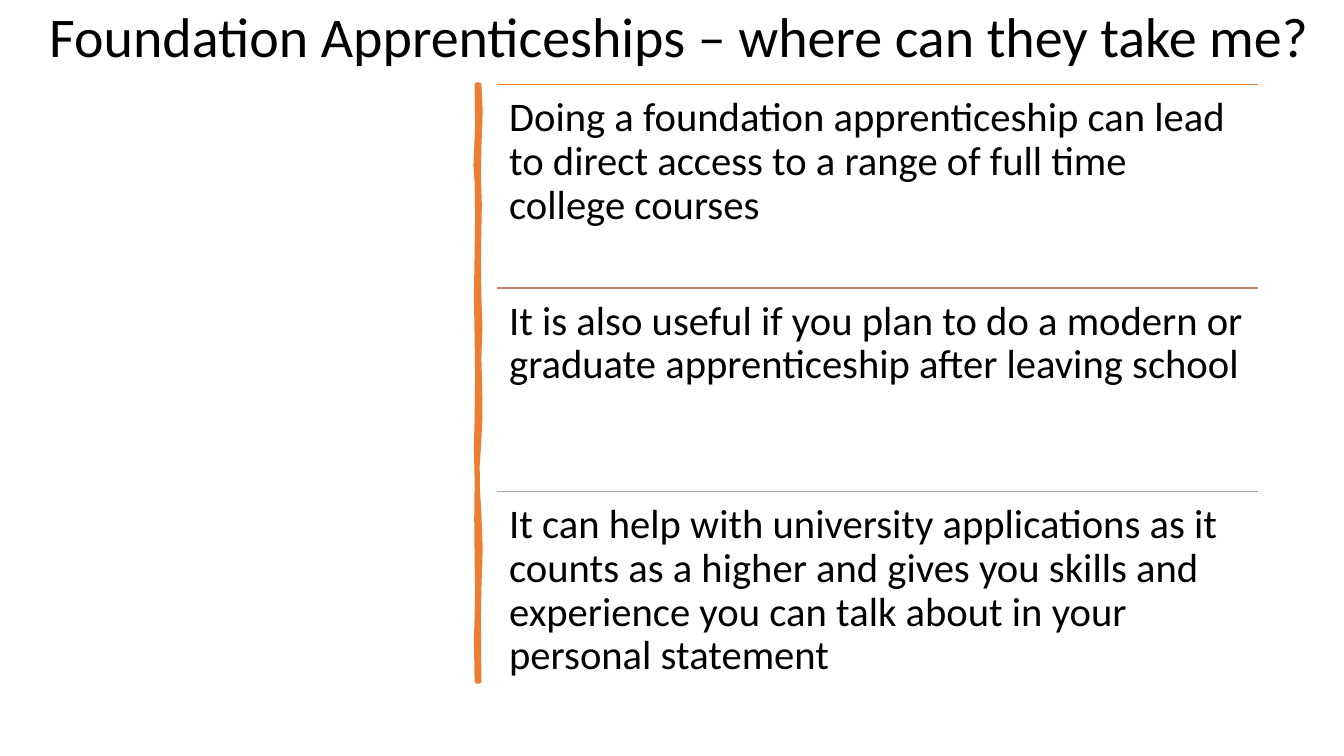
import pptx
import pptx.util
import pptx.dml.color
import pptx.enum.shapes
import pptx.enum.text
import pptx.oxml.ns
import lxml.etree

Inches = pptx.util.Inches
Pt = pptx.util.Pt

COLOURS = {"text": "000000", "orange": "ED7D31", "rose": "C48170", "grey": "A5A5A5"}
FONT = "Calibri"

TITLE = "Foundation Apprenticeships – where can they take me?"
BENEFITS = [
    ("orange", "Doing a foundation apprenticeship can lead to direct access to a range of "
               "full time college courses"),
    ("rose", "It is also useful if you plan to do a modern or graduate apprenticeship "
             "after leaving school"),
    ("grey", "It can help with university applications as it counts as a higher and gives "
             "you skills and experience you can talk about in your personal statement"),
]

# Edges of the brush stroke: (across, down) in thousandths of an inch
RIGHT_EDGE = [(22, 0), (35, 260), (22, 620), (17, 900), (27, 1200), (22, 1420), (17, 1750),
              (22, 2100), (32, 2400), (22, 2720), (30, 3000), (32, 3300), (22, 3520),
              (5, 3780), (7, 4000), (22, 4260), (35, 4600), (22, 5000), (17, 5300), (22, 5920)]
LEFT_EDGE = [(0, 5920), (-7, 5500), (0, 5290), (5, 5000), (0, 4730), (-4, 4300), (0, 3930),
             (-7, 3600), (0, 3310), (5, 2900), (0, 2510), (-7, 2100), (0, 1660),
             (5, 1300), (0, 970), (-12, 800), (5, 400), (0, 0)]


def rgb(name):
    return pptx.dml.color.RGBColor.from_string(COLOURS[name])


def add_text(page, left, top, width, height, text, size, inset=None, spacing=None):
    box = page.shapes.add_textbox(Inches(left), Inches(top), Inches(width), Inches(height))
    frame = box.text_frame
    frame.word_wrap = True
    if inset is not None:
        frame.margin_left = frame.margin_right = Inches(inset)
        frame.margin_top = frame.margin_bottom = Inches(inset)
    para = frame.paragraphs[0]
    para.text = text
    para.font.name = FONT
    para.font.size = Pt(size)
    para.font.color.rgb = rgb("text")
    if spacing is not None:
        para.line_spacing = spacing
    return box


def add_title(page, left, top, width, height):
    box = add_text(page, left, top, width, height, TITLE, 40)
    box.text_frame.auto_size = pptx.enum.text.MSO_AUTO_SIZE.SHAPE_TO_FIT_TEXT


def add_brush_stroke(page, left, top):
    """Hand-drawn vertical divider."""
    points = RIGHT_EDGE + LEFT_EDGE
    builder = page.shapes.build_freeform(*points[0], scale=Inches(1) / 1000)
    builder.add_line_segments(points[1:], close=True)
    stroke = builder.convert_to_shape(Inches(left), Inches(top))
    stroke.shadow.inherit = False
    stroke.fill.solid()
    stroke.fill.fore_color.rgb = rgb("orange")
    stroke.line.color.rgb = rgb("orange")
    stroke.line.width = Pt(3.25)
    outline = stroke.line._get_or_add_ln()
    lxml.etree.SubElement(outline, pptx.oxml.ns.qn("a:round"))


def add_rule(page, left, top, width, colour):
    rule = page.shapes.add_connector(
        pptx.enum.shapes.MSO_CONNECTOR.STRAIGHT,
        Inches(left), Inches(top), Inches(left + width), Inches(top))
    rule.line.color.rgb = rgb(colour)
    rule.line.width = Pt(1)
    lxml.etree.SubElement(rule._element.spPr, pptx.oxml.ns.qn("a:effectLst"))


def add_benefits(page, left, top, width, height):
    """Equal rows, each a rule with its statement below."""
    row_height = height / len(BENEFITS)
    for index, (colour, text) in enumerate(BENEFITS):
        row_top = top + index * row_height
        add_rule(page, left, row_top, width, colour)
        add_text(page, left, row_top, width, row_height, text, 29, inset=0.12, spacing=0.9)


def main():
    deck = pptx.Presentation()
    deck.slide_width = Inches(13.33)
    deck.slide_height = Inches(7.5)
    page = deck.slides.add_slide(deck.slide_layouts[6])
    add_brush_stroke(page, 4.73, 0.84)
    add_benefits(page, 4.93, 0.84, 7.55, 6.05)
    add_title(page, 0.39, -0.03, 12.8, 0.77)
    deck.save("out.pptx")


if __name__ == "__main__":
    main()
